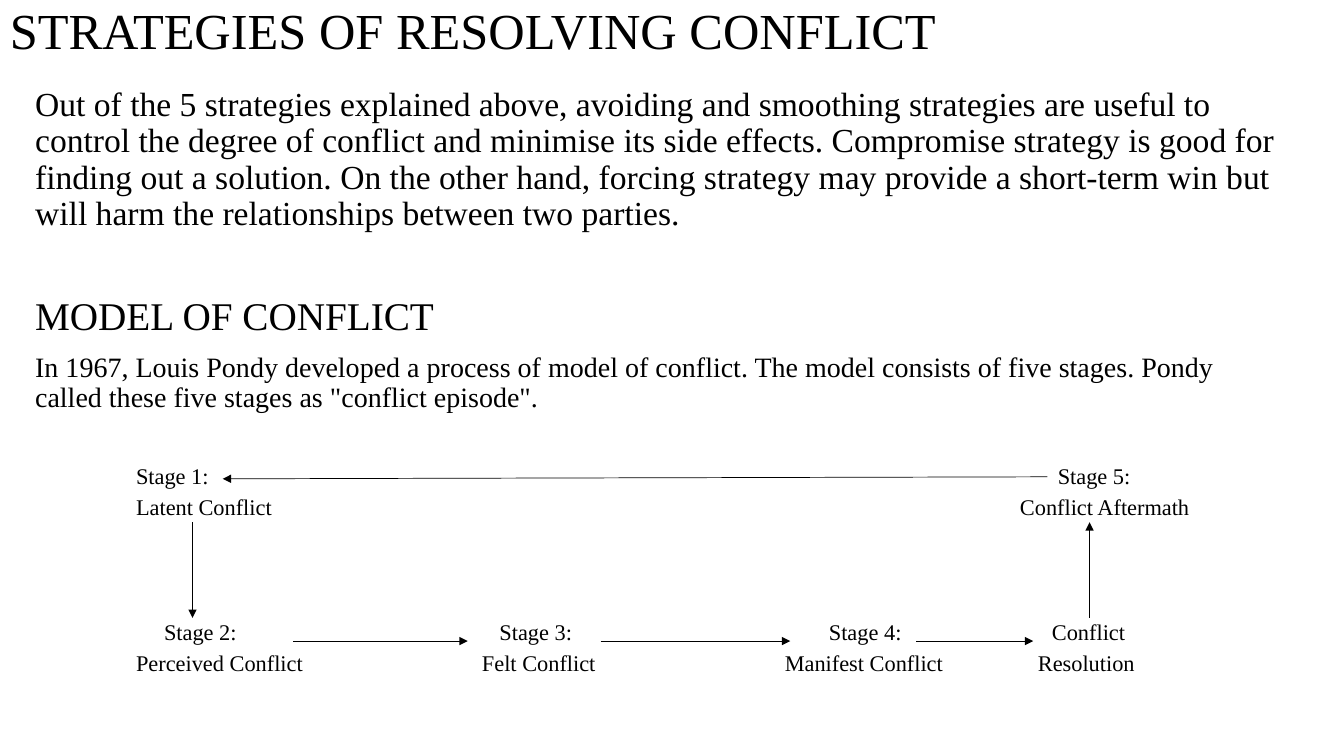
from dataclasses import dataclass

from lxml import etree
from pptx import Presentation
from pptx.dml.color import RGBColor
from pptx.enum.shapes import MSO_CONNECTOR as CONN
from pptx.enum.text import MSO_ANCHOR as ANCHOR
from pptx.oxml.ns import qn
from pptx.util import Pt


@dataclass(frozen=True)
class Theme:
    font: str = "Times New Roman"
    ink: RGBColor = RGBColor(0, 0, 0)
    paper: RGBColor = RGBColor(255, 255, 255)
    title: int = 36
    lead: int = 24
    heading: int = 28
    body: int = 20
    label: int = 16
    line: float = 0.5


THEME = Theme()

BODY = [
    ("Out of the 5 strategies explained above, avoiding and smoothing strategies are useful to "
     "control the degree of conflict and minimise its side effects. Compromise strategy is good "
     "for finding out a solution. On the other hand, forcing strategy may provide a short-term "
     "win but will harm the relationships between two parties.", THEME.lead, 0),
    ("MODEL OF CONFLICT", THEME.heading, 46),
    ("In 1967, Louis Pondy developed a process of model of conflict. The model consists of five "
     "stages. Pondy called these five stages as \"conflict episode\".", THEME.body, 10),
]

TOP_ROW, BOTTOM_ROW = 332.2, 443.6
STAGES = [
    ("Stage 1:", "Latent Conflict", 97.2, TOP_ROW, 0),
    ("Stage 2:", "Perceived Conflict", 97.2, BOTTOM_ROW, 20),
    ("Stage 3:", "Felt Conflict", 344.3, BOTTOM_ROW, 12.5),
    ("Stage 4:", "Manifest Conflict", 560.6, BOTTOM_ROW, 31.5),
    ("Conflict", "Resolution", 741.4, BOTTOM_ROW, 10),
    ("Stage 5:", "Conflict Aftermath", 728.6, TOP_ROW, 27),
]

UPPER_END, LOWER_END, FLOW_Y = 373, 441.4, 457.9
ARROWS = [
    (748.1, 340.6, 159.1, 342),
    (137.5, UPPER_END, 137.5, LOWER_END),
    (209.5, FLOW_Y, 334.1, FLOW_Y),
    (429.1, FLOW_Y, 564.5, FLOW_Y),
    (654.5, FLOW_Y, 738, FLOW_Y),
    (778.3, LOWER_END, 778.3, UPPER_END),
]


def add_text(slide, box, paragraphs, inset=(7.2, 3.6), anchor=ANCHOR.TOP, wrap=True, indent=0):
    tf = slide.shapes.add_textbox(*map(Pt, box)).text_frame
    tf.word_wrap = wrap
    tf.vertical_anchor = anchor
    tf.margin_left = tf.margin_right = Pt(inset[0])
    tf.margin_top = tf.margin_bottom = Pt(inset[1])
    for i, (text, size, before) in enumerate(paragraphs):
        p = tf.add_paragraph() if i else tf.paragraphs[0]
        p.text = text
        p.line_spacing = 0.9
        if before:
            p.space_before = Pt(before)
        font = p.runs[0].font
        font.name = THEME.font
        font.size = Pt(size)
        font.color.rgb = THEME.ink
    if indent:
        tf.paragraphs[0]._p.get_or_add_pPr().set("marL", str(Pt(indent)))


def add_stage(slide, name, detail, left, top, indent):
    lines = [(name, THEME.label, 0), (detail, THEME.label, 5)]
    add_text(slide, (left, top, 130, 40), lines, inset=(0, 0), wrap=False, indent=indent)


def add_arrow(slide, *ends):
    line = slide.shapes.add_connector(CONN.STRAIGHT, *map(Pt, ends))
    line.line.color.rgb = THEME.ink
    line.line.width = Pt(THEME.line)
    etree.SubElement(line.line._get_or_add_ln(), qn("a:tailEnd"), type="triangle")
    etree.SubElement(line._element.spPr, qn("a:effectLst"))


def main():
    prs = Presentation()
    prs.slide_width, prs.slide_height = Pt(960), Pt(540)
    slide = prs.slides.add_slide(prs.slide_layouts[6])
    fill = slide.background.fill
    fill.solid()
    fill.fore_color.rgb = THEME.paper
    add_text(slide, (0, 0, 693.4, 47.5),
             [("STRATEGIES OF RESOLVING CONFLICT", THEME.title, 0)], anchor=ANCHOR.MIDDLE)
    add_text(slide, (18, 59, 903.6, 250), BODY)
    for stage in STAGES:
        add_stage(slide, *stage)
    for arrow in ARROWS:
        add_arrow(slide, *arrow)
    prs.save("out.pptx")


if __name__ == "__main__":
    main()
